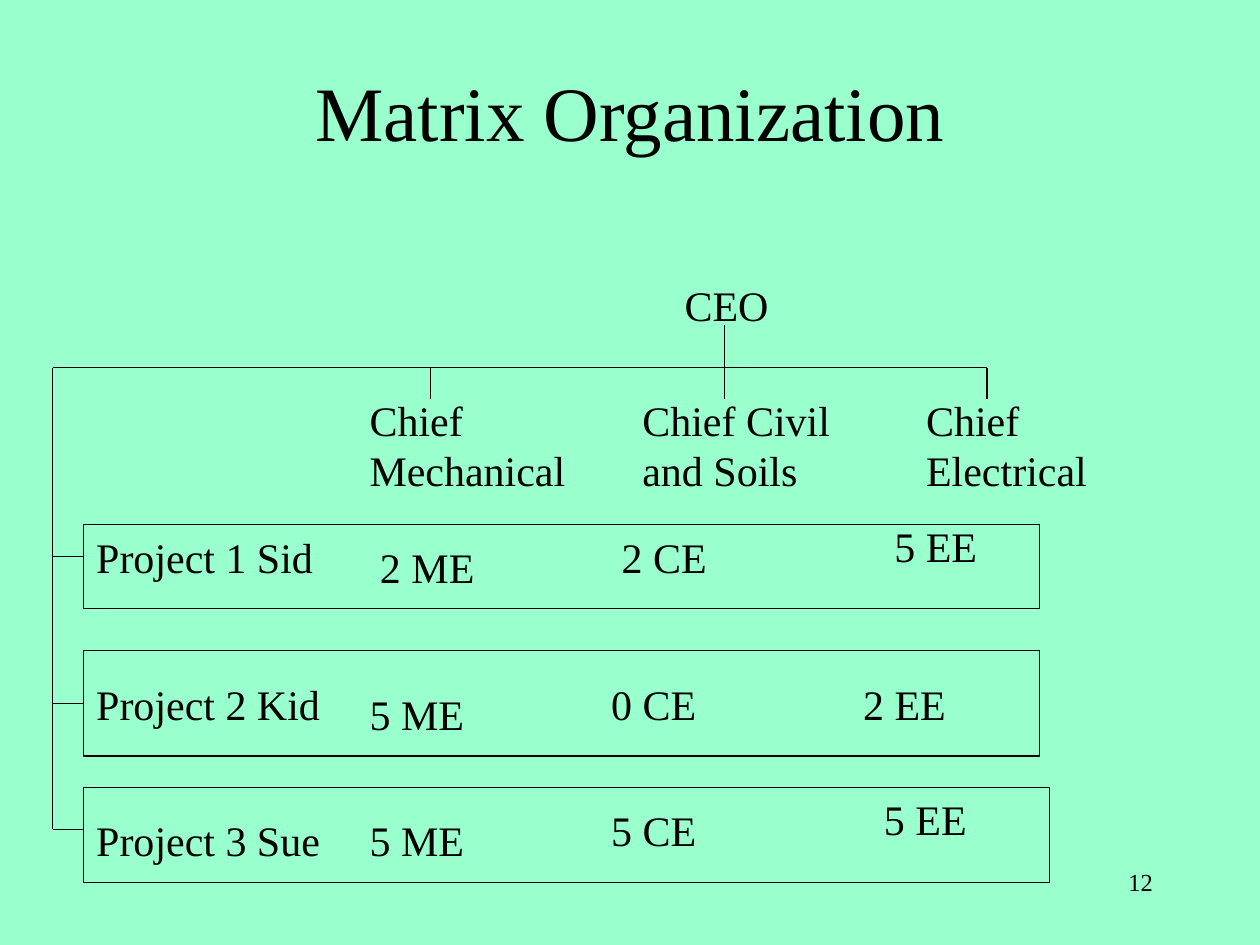
from pptx import Presentation
from pptx.dml.color import RGBColor
from pptx.enum.shapes import MSO_CONNECTOR, MSO_SHAPE
from pptx.enum.text import MSO_ANCHOR, PP_ALIGN
from pptx.oxml.ns import qn
from pptx.util import Cm, Pt
from lxml.etree import SubElement

# Content: text with its place in cm
TITLE = ("Matrix Organization", (1.91, 0.64, 21.59, 3.18))
NUMBER = ("12", (18.2, 17.36, 5.29, 1.27))
CEO = ("CEO", (13.55, 5.5, 4.23, 1.27))
CHIEFS = [("Chief Mechanical", 7.2), ("Chief Civil and Soils", 12.7),
          ("Chief Electrical", 18.42)]
PROJECTS = [
    {"name": ("Project 1 Sid", 10.58), "box": (10.58, 19.26, 1.69), "branch": 11.22,
     "staff": [("2 ME", 7.41, 10.8), ("2 CE", 12.28, 10.58), ("5 EE", 17.78, 10.37)]},
    {"name": ("Project 2 Kid", 13.55), "box": (13.12, 19.26, 2.12), "branch": 14.18,
     "staff": [("5 ME", 7.2, 13.76), ("0 CE", 12.07, 13.55), ("2 EE", 17.15, 13.55)]},
    {"name": ("Project 3 Sue", 16.3), "box": (15.88, 19.47, 1.91), "branch": 16.72,
     "staff": [("5 ME", 7.2, 16.3), ("5 CE", 12.07, 16.09), ("5 EE", 17.57, 15.88)]},
]

THEME = {"back": RGBColor(0x99, 0xFF, 0xCC), "ink": RGBColor(0, 0, 0),
         "font": "Times New Roman", "title": Pt(44), "body": Pt(24),
         "number": Pt(14), "line": Pt(0.75)}

# Chart positions in cm
TRUNK_X, BUS_Y, DROP_Y = 1.06, 7.41, 8.04
CEO_X, CEO_BOTTOM = 14.61, 6.56
MECHANICAL_X, ELECTRICAL_X = 8.68, 19.9
ROW_X, CHIEF_Y = 1.69, 7.83
LINE_H, NAME_W, STAFF_W = 1.27, 5.5, 3.6
CHIEF_W, CHIEF_H = 4.87, 2.29

prs = Presentation()
prs.slide_width, prs.slide_height = Cm(25.4), Cm(19.05)
s = prs.slides.add_slide(prs.slide_layouts[6])
s.background.fill.solid()
s.background.fill.fore_color.rgb = THEME["back"]


def add_text(text, box, size="body", align=PP_ALIGN.LEFT, anchor=MSO_ANCHOR.TOP):
    tf = s.shapes.add_textbox(*map(Cm, box)).text_frame
    tf.word_wrap, tf.vertical_anchor = True, anchor
    p = tf.paragraphs[0]
    p.alignment = align
    r = p.add_run()
    r.text = text
    for key, value in {"name": THEME["font"], "size": THEME[size]}.items():
        setattr(r.font, key, value)
    r.font.color.rgb = THEME["ink"]


def set_line(sp):
    sp.line.color.rgb = THEME["ink"]
    sp.line.width = THEME["line"]


def add_box(*box):
    sp = s.shapes.add_shape(MSO_SHAPE.RECTANGLE, *map(Cm, box))
    sp.shadow.inherit = False
    sp.fill.background()
    set_line(sp)
    return sp


def add_line(*ends):
    sp = s.shapes.add_connector(MSO_CONNECTOR.STRAIGHT, *map(Cm, ends))
    set_line(sp)
    SubElement(sp._element.spPr, qn("a:effectLst"))
    return sp


# Title and slide number
add_text(*TITLE, size="title", align=PP_ALIGN.CENTER, anchor=MSO_ANCHOR.MIDDLE)
add_text(*NUMBER, size="number", align=PP_ALIGN.RIGHT)

# CEO and chiefs
add_text(*CEO)
for text, x in CHIEFS:
    add_text(text, (x, CHIEF_Y, CHIEF_W, CHIEF_H))

# Lines from the CEO to the chiefs, and the trunk to the projects
add_line(CEO_X, CEO_BOTTOM, CEO_X, DROP_Y)
add_line(TRUNK_X, BUS_Y, ELECTRICAL_X, BUS_Y)
for x in (MECHANICAL_X, ELECTRICAL_X):
    add_line(x, BUS_Y, x, DROP_Y)
add_line(TRUNK_X, BUS_Y, TRUNK_X, PROJECTS[-1]["branch"])

# Project rows, each with its branch
for project in PROJECTS:
    name, name_y = project["name"]
    add_text(name, (ROW_X, name_y, NAME_W, LINE_H))
    for text, x, y in project["staff"]:
        add_text(text, (x, y, STAFF_W, LINE_H))
    top, width, height = project["box"]
    box = add_box(ROW_X, top, width, height)
    y = project["branch"]
    branch = add_line(TRUNK_X, y, ROW_X, y)
    if abs(top + height / 2 - y) < 0.02:
        branch.end_connect(box, 1)

prs.save("out.pptx")
